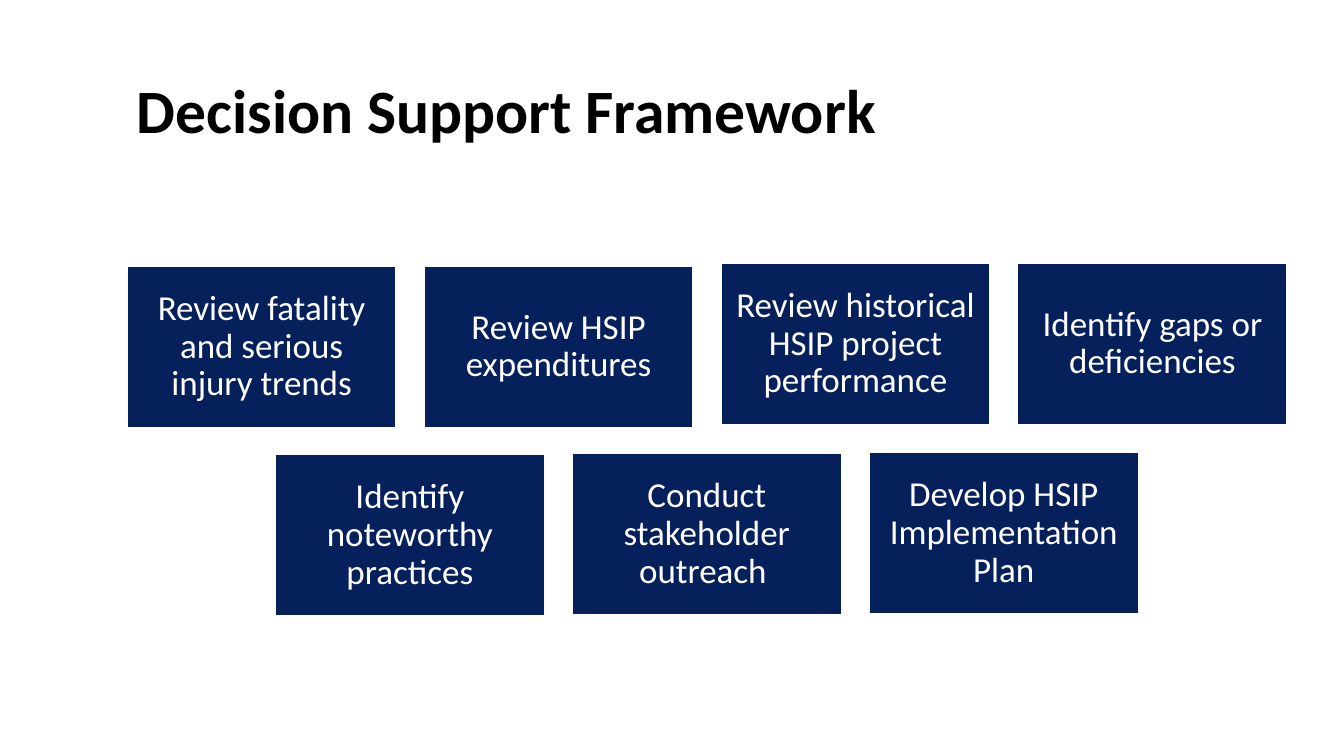
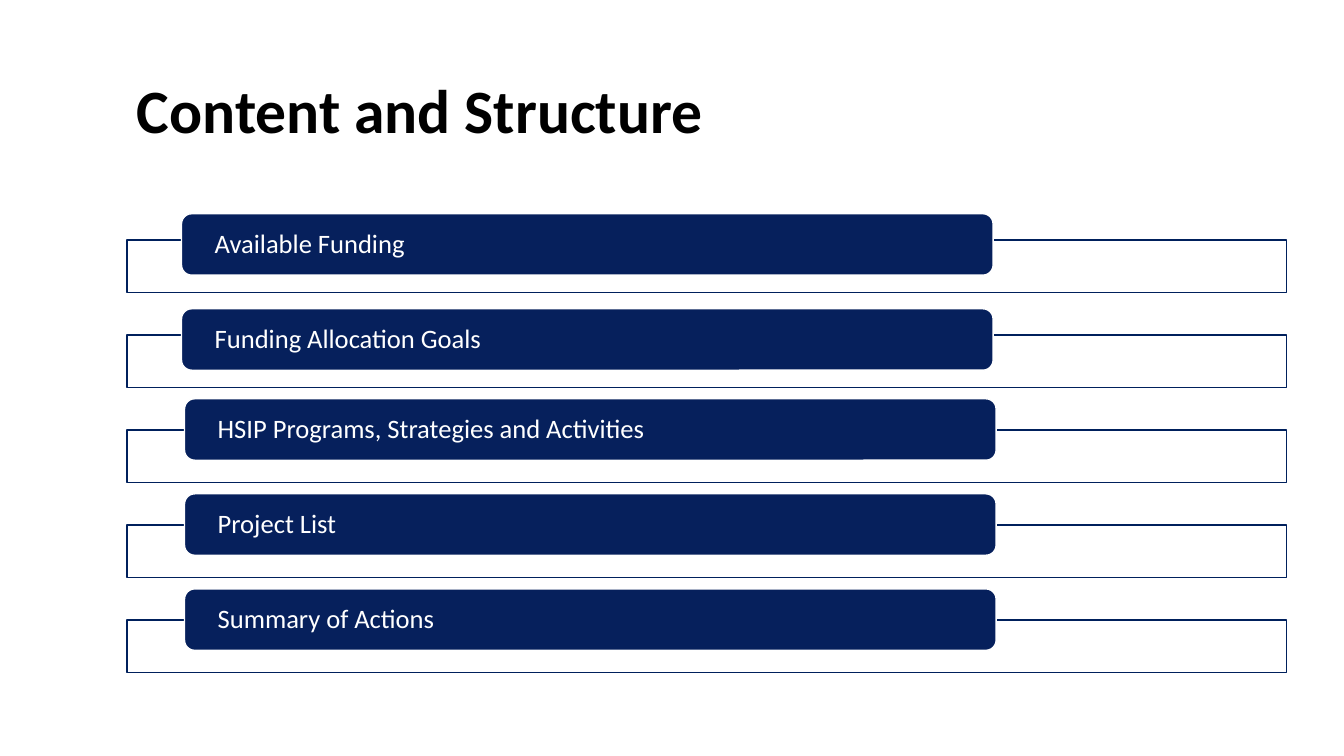
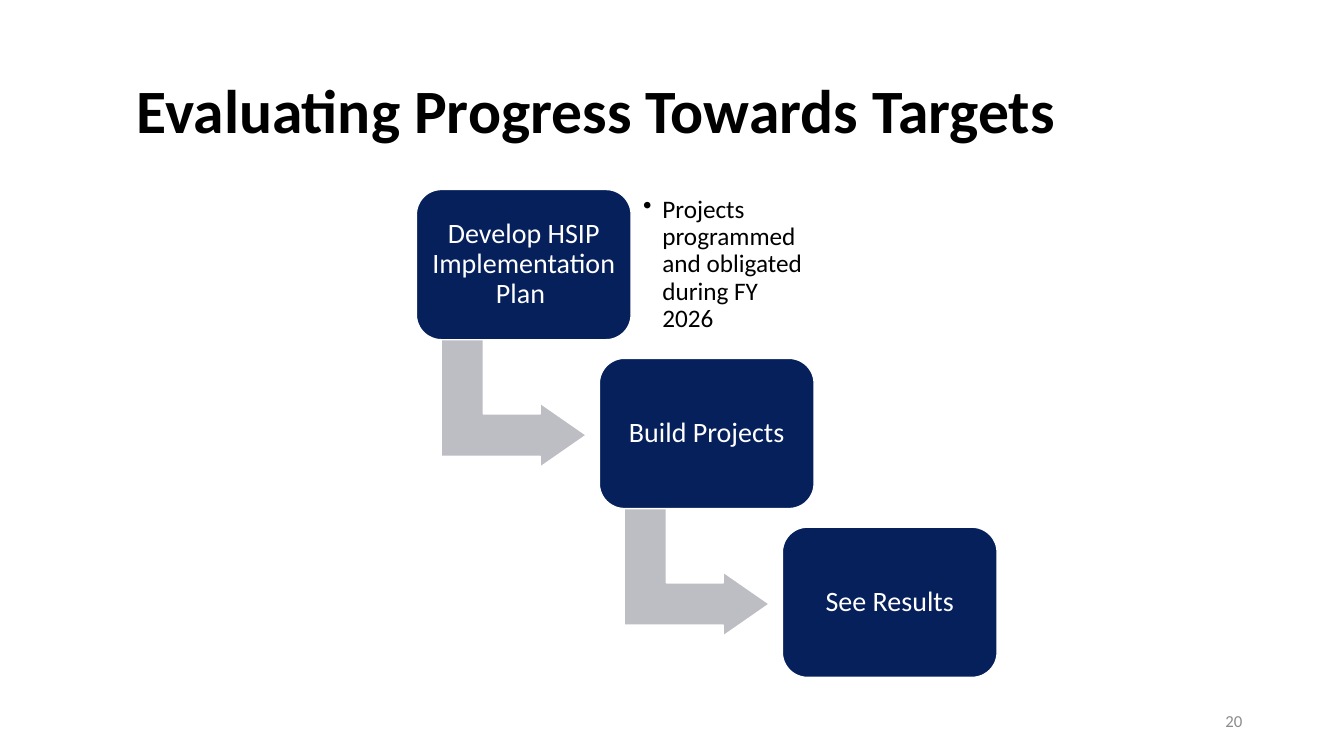
from lxml.etree import SubElement
from pptx import Presentation
from pptx.dml.color import RGBColor
from pptx.enum.shapes import MSO_SHAPE as Shape
from pptx.enum.text import MSO_ANCHOR as Anchor, PP_ALIGN as Align
from pptx.oxml.ns import qn
from pptx.util import Inches, Pt

COLORS = {
    "navy": "06205C",
    "outline": "00205C",
    "arrow": "BDBDC4",
    "white": "FFFFFF",
    "black": "000000",
    "number": "8C8C8C",
}
FONT = "Calibri"
CONTENT_LEFT, CONTENT_WIDTH = 1.26, 11.5


def add_shape(page, kind, left, top, width, height, fill="navy", line="white"):
    shape = page.shapes.add_shape(kind, Inches(left), Inches(top), Inches(width), Inches(height))
    shape.shadow.inherit = False
    shape.fill.solid()
    shape.fill.fore_color.rgb = RGBColor.from_string(COLORS[fill])
    shape.line.color.rgb = RGBColor.from_string(COLORS[line])
    shape.line.width = Pt(1)
    return shape


def write(box, text, size, color="white", align=Align.CENTER, margins=(0.1, 0.05),
          bold=False, spacing=0.9, bullet=False):
    frame = box.text_frame
    frame.word_wrap = True
    frame.vertical_anchor = Anchor.MIDDLE
    frame.margin_left = frame.margin_right = Inches(margins[0])
    frame.margin_top = frame.margin_bottom = Inches(margins[1])
    para = frame.paragraphs[0]
    para.alignment = align
    para.line_spacing = spacing
    if bullet:
        properties = para._p.get_or_add_pPr()
        properties.set("marL", str(Inches(0.19)))
        properties.set("indent", str(-Inches(0.19)))
        SubElement(properties, qn("a:buChar")).set("char", "•")
    span = para.add_run()
    span.text = text
    span.font.name = FONT
    span.font.size = Pt(size)
    span.font.bold = bold
    span.font.color.rgb = RGBColor.from_string(COLORS[color])


deck = Presentation()
deck.slide_width, deck.slide_height = Inches(13.33), Inches(7.5)

pages = []
for title in ("Decision Support Framework", "Content and Structure", "Evaluating Progress Towards Targets"):
    page = deck.slides.add_slide(deck.slide_layouts[6])
    title_box = page.shapes.add_textbox(Inches(CONTENT_LEFT), Inches(0.4), Inches(CONTENT_WIDTH), Inches(1.45))
    write(title_box, title, 44, "black", Align.LEFT, bold=True)
    pages.append(page)
framework, structure, progress = pages

framework_rows = [
    (CONTENT_LEFT, [
        ("Review fatality and serious injury trends", 2.64),
        ("Review HSIP expenditures", 2.64),
        ("Review historical HSIP project performance", 2.61),
        ("Identify gaps or deficiencies", 2.61),
    ]),
    (2.73, [
        ("Identify noteworthy practices", 4.51),
        ("Conduct stakeholder outreach ", 4.5),
        ("Develop HSIP Implementation Plan", 4.49),
    ]),
]
for row_left, cells in framework_rows:
    for column, (label, top) in enumerate(cells):
        card = add_shape(framework, Shape.RECTANGLE, row_left + column * 2.945, top, 2.67, 1.6)
        write(card, label, 25, margins=(0.1, 0.1))

sections = [
    ("Available Funding", 1.8, 0.26),
    ("Funding Allocation Goals", 1.8, 0.26),
    ("HSIP Programs, Strategies and Activities", 1.83, 0.31),
    ("Project List", 1.83, 0.31),
    ("Summary of Actions", 1.83, 0.31),
]
for index, (label, left, rise) in enumerate(sections):
    top = 2.38 + index * 0.943
    panel = add_shape(structure, Shape.RECTANGLE, CONTENT_LEFT, top, CONTENT_WIDTH, 0.52, "white", "outline")
    panel_color = panel.fill._xPr.find(qn("a:solidFill"))[0]
    SubElement(panel_color, qn("a:alpha")).set("val", "90000")
    bar = add_shape(structure, Shape.ROUNDED_RECTANGLE, left, top - rise, 8.05, 0.61)
    write(bar, label, 19, align=Align.LEFT, margins=(0.3, 0))

steps = ["Develop HSIP Implementation Plan ", "Build Projects", "See Results"]
for index, label in enumerate(steps):
    left, top = 4.13 + index * 1.815, 1.88 + index * 1.675
    if index < len(steps) - 1:
        arrow = add_shape(progress, Shape.BENT_UP_ARROW, left + 0.33, top + 1.4, 1.27, 1.44, "arrow")
        arrow.rotation = 90
        for position, ratio in enumerate((0.33, 0.25, 0.36)):
            arrow.adjustments[position] = ratio
    step = add_shape(progress, Shape.ROUNDED_RECTANGLE, left, top, 2.13, 1.49)
    write(step, label, 20, margins=(0.08, 0.08))

note = progress.shapes.add_textbox(Inches(6.31), Inches(2.02), Inches(1.74), Inches(1.21))
write(note, "Projects programmed and obligated during FY 2026", 18, "black", Align.LEFT, (0.07, 0.07), bullet=True)

page_number = progress.shapes.add_textbox(Inches(9.42), Inches(6.95), Inches(3), Inches(0.4))
write(page_number, "20", 12, "number", Align.RIGHT, spacing=1.0)

deck.save("out.pptx")
